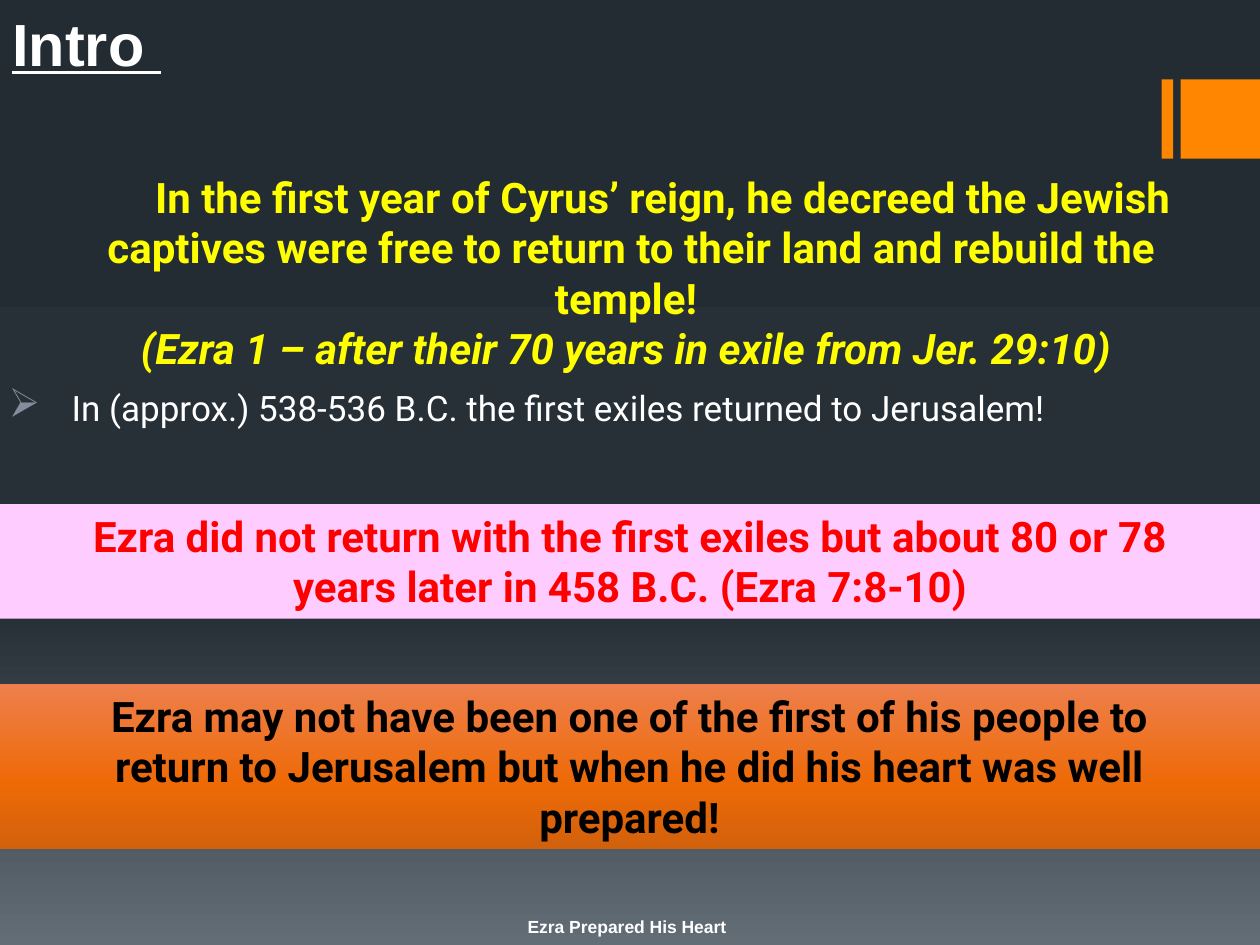
"""Build the Ezra introduction slide."""
from copy import deepcopy

from lxml import etree
from pptx import Presentation
from pptx.dml.color import RGBColor
from pptx.enum.shapes import MSO_SHAPE
from pptx.enum.text import MSO_ANCHOR, MSO_AUTO_SIZE, PP_ALIGN
from pptx.oxml.ns import qn
from pptx.util import Inches, Pt

RECTANGLE = MSO_SHAPE.RECTANGLE
LEFT, CENTER = PP_ALIGN.LEFT, PP_ALIGN.CENTER
TOP, BOTTOM = MSO_ANCHOR.TOP, MSO_ANCHOR.BOTTOM
FIT_SHAPE, NO_FIT = MSO_AUTO_SIZE.SHAPE_TO_FIT_TEXT, MSO_AUTO_SIZE.NONE
WHITE, ORANGE = "FFFFFF", "FF8600"
rgb = RGBColor.from_string


def write(shape, lines, *, size, color, font="Roboto", bold=False, underline=False,
          align=CENTER, anchor=TOP, hanging=True, fit=FIT_SHAPE):
    frame = shape.text_frame
    frame.word_wrap = True
    frame.auto_size = fit
    frame.vertical_anchor = anchor
    for index, line in enumerate(lines):
        paragraph = frame.paragraphs[0] if index == 0 else frame.add_paragraph()
        paragraph.alignment = align
        if hanging:
            properties = paragraph._p.get_or_add_pPr()
            properties.set("marL", str(Inches(0.5)))
            properties.set("indent", str(Inches(-0.5)))
        run = paragraph.add_run()
        run.text = line
        run.font.name = font
        run.font.size = Pt(size)
        run.font.bold = bold
        run.font.underline = underline
        run.font.color.rgb = rgb(color)
    return frame


def shade(fill, owner, stops):
    fill.gradient()
    fill.gradient_angle = 270
    stop_list = next(owner.iter(qn("a:gsLst")))
    stop_list.append(deepcopy(stop_list[0]))
    for stop, (position, color) in zip(fill.gradient_stops, stops):
        stop.position = position
        stop.color.rgb = rgb(color)


deck = Presentation()
deck.slide_width, deck.slide_height = Inches(10), Inches(7.5)
slide = deck.slides.add_slide(deck.slide_layouts[6])
shapes = slide.shapes
shade(slide.background.fill, slide._element,
      [(0, "242C33"), (0.65, "273037"), (1, "636D76")])

bands = []
for left, top, width, height, color in [
    (9.22, 0.63, 0.09, 0.63, ORANGE),
    (9.37, 0.63, 0.63, 0.63, ORANGE),
    (0, 4, 10, 0.91, "FFCCFF"),
    (-0.01, 5.43, 10.01, 1.31, None),
]:
    band = shapes.add_shape(RECTANGLE, Inches(left), Inches(top), Inches(width), Inches(height))
    band.shadow.inherit = False
    band.line.fill.background()
    if color:
        band.fill.solid()
        band.fill.fore_color.rgb = rgb(color)
    bands.append(band)
return_band, heart_band = bands[2:]
shade(heart_band.fill, heart_band._element,
      [(0, "EE7F4C"), (0.6, "EE6A07"), (1, "D2610C")])

title = shapes.add_textbox(0, 0, Inches(10), Inches(0.67))
write(title, ["Intro "], size=34, color=WHITE, font="Arial", bold=True, underline=True,
      align=LEFT, anchor=BOTTOM, hanging=False, fit=NO_FIT)

footer = shapes.add_textbox(Inches(3.39), Inches(7.27), Inches(3.17), Inches(0.23))
footer.text_frame.margin_top = 0
write(footer, ["Ezra Prepared His Heart"], size=10, color=WHITE, font="Arial", bold=True,
      hanging=False, fit=NO_FIT)

decree = shapes.add_textbox(Inches(0.01), Inches(1.31), Inches(10), Inches(1.72))
decree_frame = write(decree, [
    "\tIn the first year of Cyrus’ reign, he decreed the Jewish",
    "captives were free to return to their land and rebuild the",
    "temple! ",
    "(Ezra 1 – after their 70 years in exile from Jer. 29:10) ",
], size=24, color="FFFF00", bold=True)
decree_frame.paragraphs[-1].runs[0].font.italic = True

exiles = shapes.add_textbox(Inches(-0.03), Inches(3.02), Inches(10), Inches(0.44))
exiles_frame = write(
    exiles, ["In (approx.) 538-536 B.C. the first exiles returned to Jerusalem!"],
    size=20, color=WHITE, align=LEFT)
bullet = exiles_frame.paragraphs[0]._p.get_or_add_pPr()
bullet_color = etree.SubElement(bullet, qn("a:buClr"))
etree.SubElement(bullet_color, qn("a:srgbClr"), val="838D9B")
etree.SubElement(bullet, qn("a:buSzPct"), val="115000")
etree.SubElement(bullet, qn("a:buChar"), char="➢")

write(return_band, [
    "Ezra did not return with the first exiles but about 80 or 78",
    "years later in 458 B.C. (Ezra 7:8-10)",
], size=24, color="FF0000", bold=True)

write(heart_band, [
    "Ezra may not have been one of the first of his people to",
    "return to Jerusalem but when he did his heart was well",
    "prepared!",
], size=24, color="000000", bold=True)

deck.save("out.pptx")
